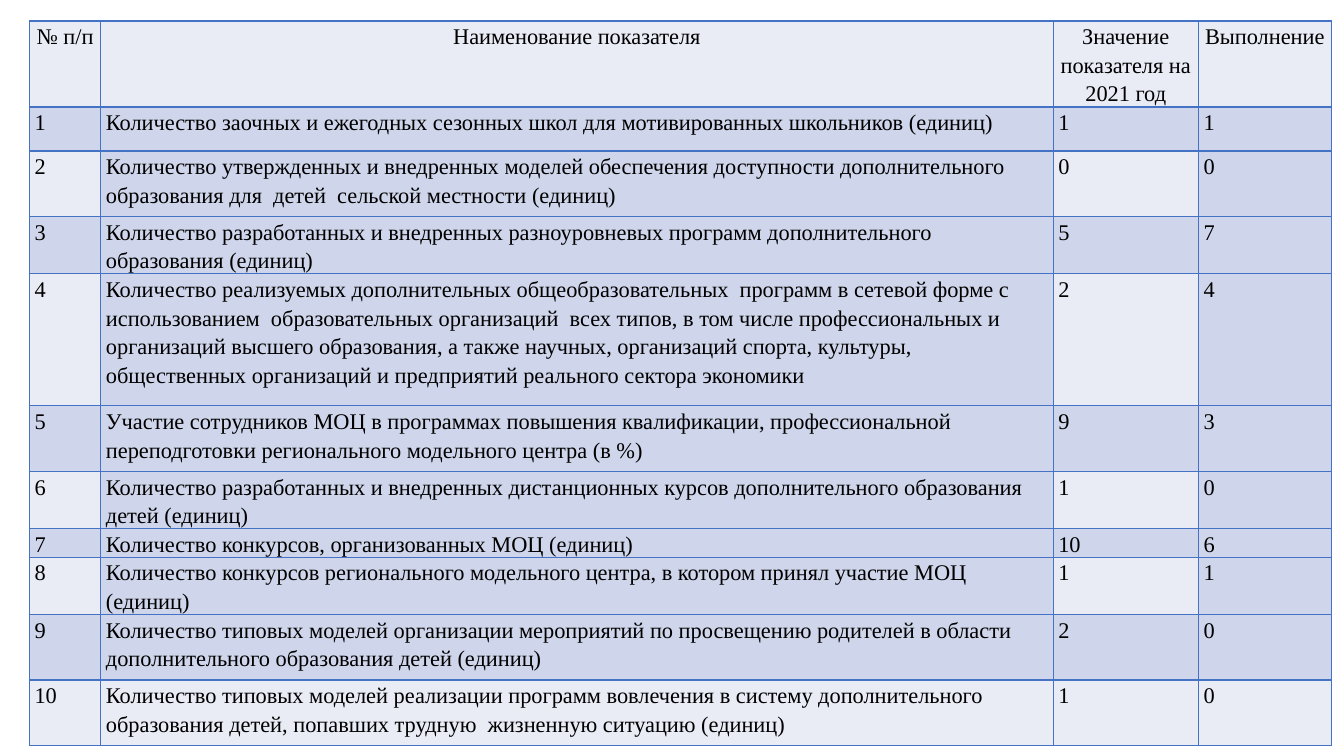
from lxml.etree import SubElement
from pptx import Presentation
from pptx.dml.color import RGBColor
from pptx.enum.text import PP_ALIGN as Align
from pptx.oxml.ns import qn
from pptx.util import Cm, Pt

HEADERS = [
    ["№ п/п"],
    ["Наименование показателя"],
    ["Значение", "показателя на 2021 год"],
    ["Выполнение"],
]
INDICATORS = [
    ("Количество заочных и ежегодных сезонных школ для мотивированных школьников (единиц)", 1, 1),
    ("Количество утвержденных и внедренных моделей обеспечения доступности дополнительного "
     "образования для  детей  сельской местности (единиц)", 0, 0),
    ("Количество разработанных и внедренных разноуровневых программ дополнительного "
     "образования (единиц)", 5, 7),
    ("Количество реализуемых дополнительных общеобразовательных  программ в сетевой форме с "
     "использованием  образовательных организаций  всех типов, в том числе профессиональных и "
     "организаций высшего образования, а также научных, организаций спорта, культуры, "
     "общественных организаций и предприятий реального сектора экономики", 2, 4),
    ("Участие сотрудников МОЦ в программах повышения квалификации, профессиональной "
     "переподготовки регионального модельного центра (в %)", 9, 3),
    ("Количество разработанных и внедренных дистанционных курсов дополнительного образования "
     "детей (единиц)", 1, 0),
    ("Количество конкурсов, организованных МОЦ (единиц)", 10, 6),
    ("Количество конкурсов регионального модельного центра, в котором принял участие МОЦ "
     "(единиц)", 1, 1),
    ("Количество типовых моделей организации мероприятий по просвещению родителей в области "
     "дополнительного образования детей (единиц)", 2, 0),
    ("Количество типовых моделей реализации программ вовлечения в систему дополнительного "
     "образования детей, попавших трудную  жизненную ситуацию (единиц)", 1, 0),
]
COLUMN_WIDTHS = [1.8, 24, 3.66, 3.35]
ROW_HEIGHTS = [1.65, 1.11, 1.65, 1.11, 3.33, 1.65, 1.11, 0.56, 1.11, 1.65, 1.65]
LEFT, TOP = 0.74, 0.53
LIGHT, DARK, BORDER, TEXT = "E9EBF5", "CFD5EA", "4472C4", "000000"
LAST_ROW = len(INDICATORS)
SHADED_COLUMNS = (1, 3)


def color(value):
    return RGBColor.from_string(value)


def cell_fill(row, column):
    if row % 2:
        return DARK
    if 0 < row < LAST_ROW and column in SHADED_COLUMNS:
        return DARK
    return LIGHT


def add_borders(cell, row):
    properties = cell._tc.get_or_add_tcPr()
    widths = {
        "L": 1,
        "R": 1,
        "T": 2 if row == LAST_ROW else 1,
        "B": 2 if row == LAST_ROW - 1 else 1,
    }
    for side, width in widths.items():
        line = SubElement(properties, qn(f"a:ln{side}"), w=str(Pt(width)))
        fill = SubElement(line, qn("a:solidFill"))
        SubElement(fill, qn("a:srgbClr"), val=BORDER)


def write_cell(cell, lines, alignment):
    cell.margin_left = cell.margin_right = Cm(0.13)
    cell.margin_top = cell.margin_bottom = Cm(0)
    frame = cell.text_frame
    for index, line in enumerate(lines):
        paragraph = frame.add_paragraph() if index else frame.paragraphs[0]
        paragraph.alignment = alignment
        paragraph.line_spacing = 1.15
        run = paragraph.add_run()
        run.text = line
        run.font.name = "Times New Roman"
        run.font.size = Pt(16)
        run.font.bold = False
        run.font.color.rgb = color(TEXT)


def main():
    presentation = Presentation()
    presentation.slide_width, presentation.slide_height = Cm(33.87), Cm(19.05)
    slide = presentation.slides.add_slide(presentation.slide_layouts[6])

    rows = [HEADERS] + [
        [[str(number)], [name], [str(target)], [str(result)]]
        for number, (name, target, result) in enumerate(INDICATORS, 1)
    ]
    table = slide.shapes.add_table(
        len(rows), len(HEADERS), Cm(LEFT), Cm(TOP),
        Cm(sum(COLUMN_WIDTHS)), Cm(sum(ROW_HEIGHTS)),
    ).table
    table.first_row = table.horz_banding = False
    for column, width in zip(table.columns, COLUMN_WIDTHS):
        column.width = Cm(width)
    for row, height in zip(table.rows, ROW_HEIGHTS):
        row.height = Cm(height)

    for row, entries in enumerate(rows):
        alignment = Align.LEFT if row else Align.CENTER
        for column, lines in enumerate(entries):
            cell = table.cell(row, column)
            write_cell(cell, lines, alignment)
            add_borders(cell, row)
            cell.fill.solid()
            cell.fill.fore_color.rgb = color(cell_fill(row, column))

    presentation.save("out.pptx")


if __name__ == "__main__":
    main()
